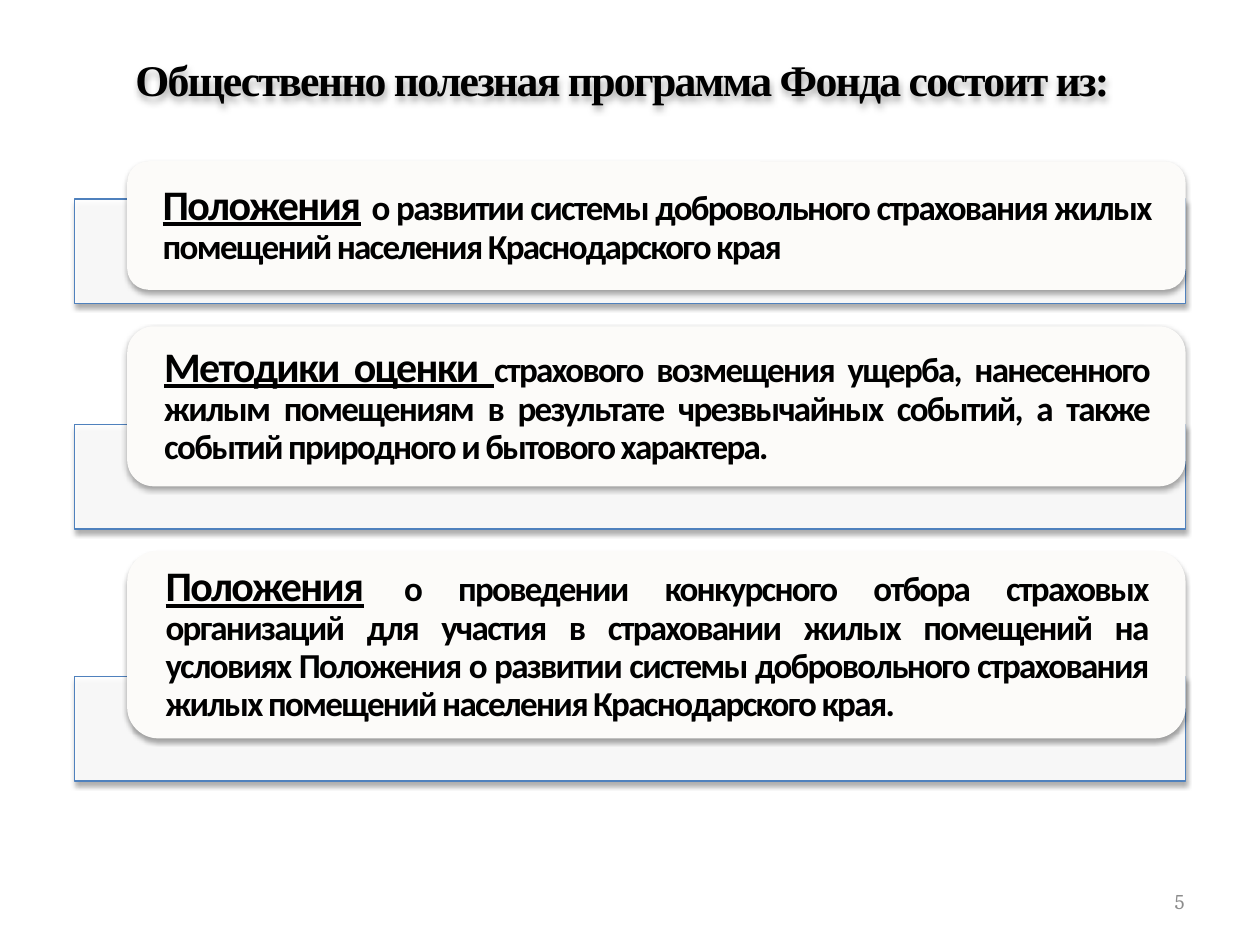
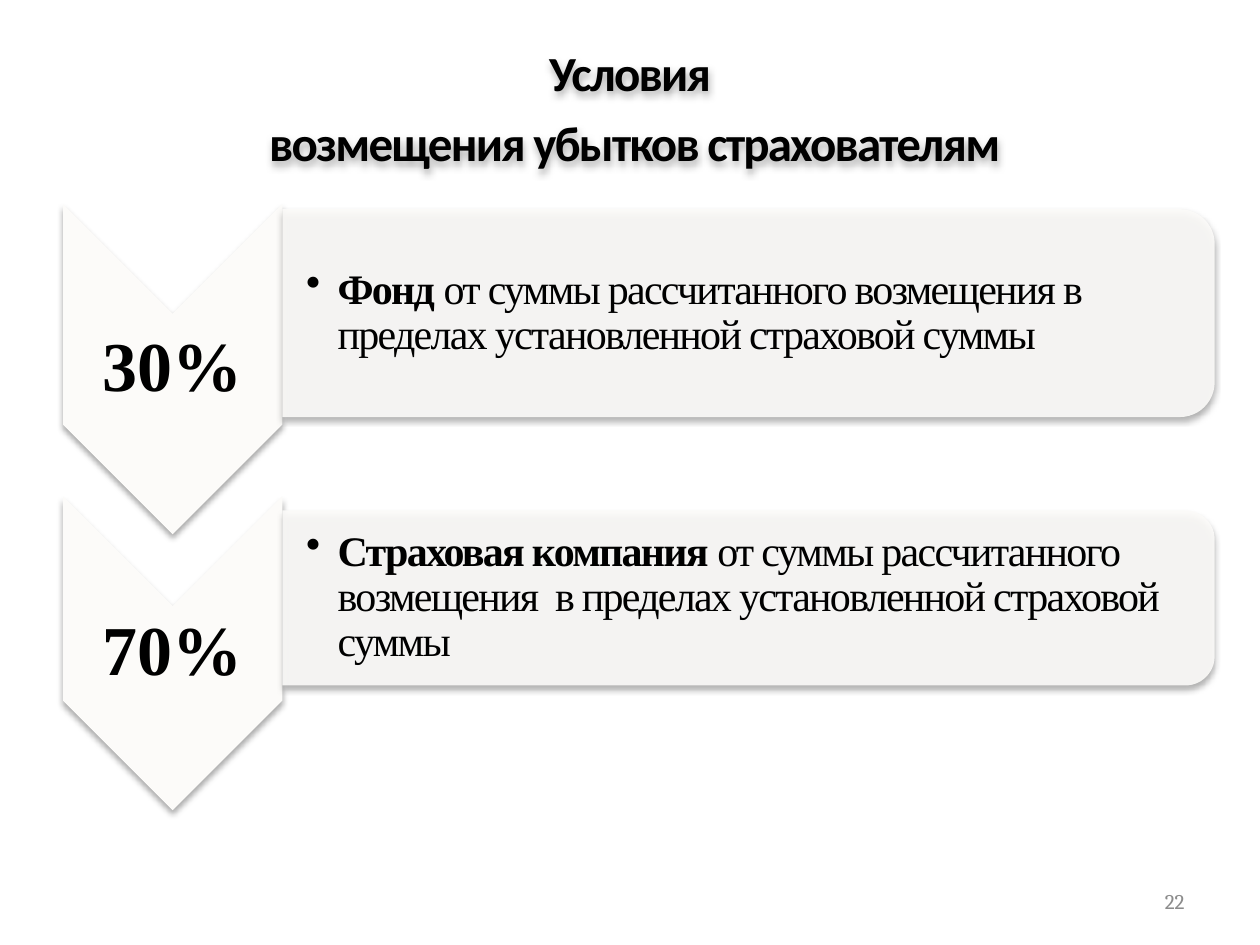
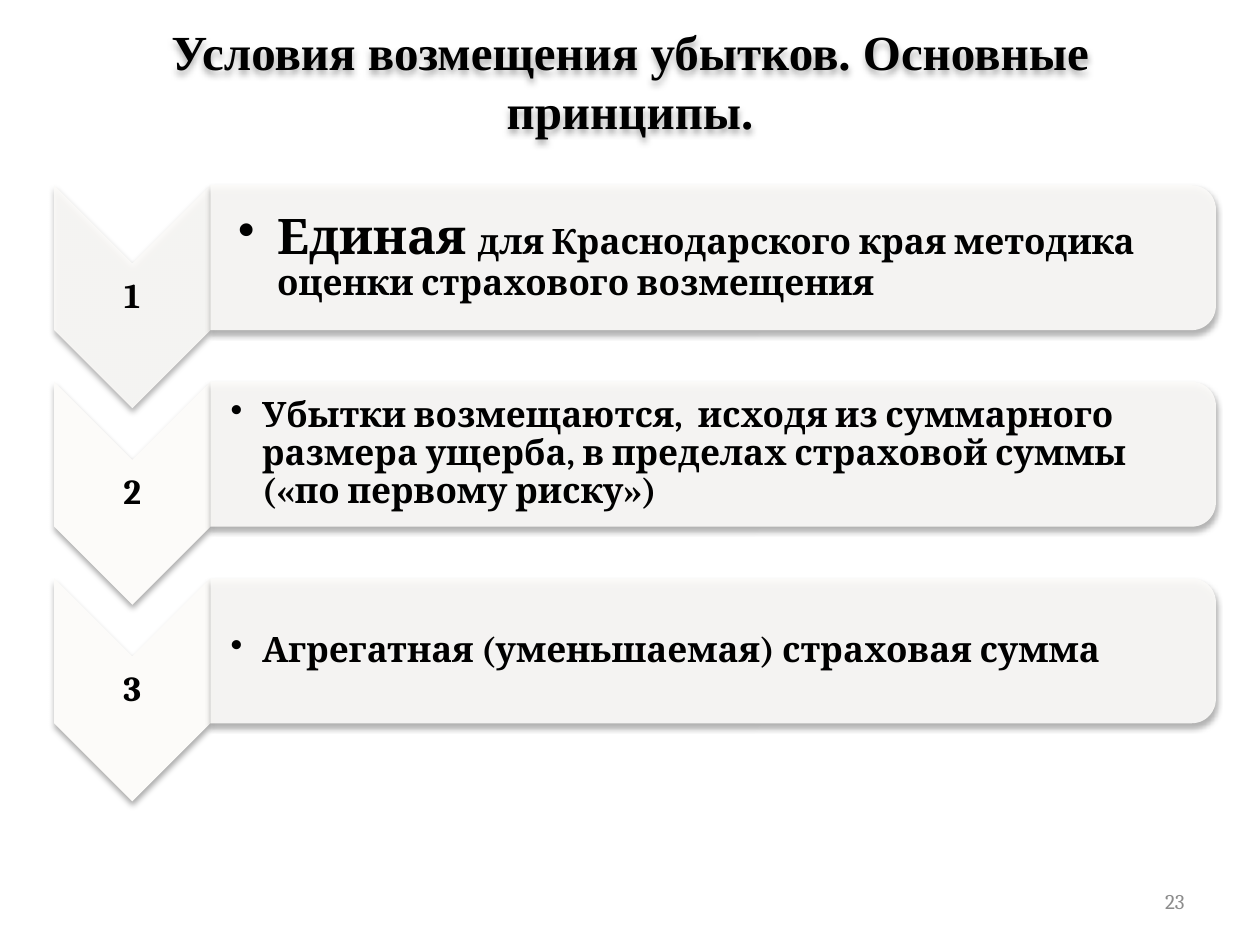
from lxml import etree
from pptx import Presentation, util as u
from pptx.dml.color import RGBColor
from pptx.enum import shapes, text
from pptx.oxml import parse_xml
from pptx.oxml.ns import nsdecls, qn

COLORS = {"ink": "000000", "white": "FFFFFF", "cream": "FCFBF9",
          "edge": "4F81BD", "number": "8C8C8C", "outline": "3C4422"}
SERIF, SANS, BOOK = "Times New Roman", "Calibri", "Cambria"
CELL = u.Inches(0.1)  # the slide is a grid of 100 columns by 75 rows
# shadow: opacity in percent, blur and distance in points
STRIP_SHADOW, ARROW_SHADOW, TITLE_SHADOW = (35, 3.1, 1.8), (32, 3.5, 2.2), (32, 4, 2.5)
TITLE = {"align": "CENTER", "shadow": TITLE_SHADOW, "outlined": True}
DEFAULT_INSETS = (1, 0.5, 1, 0.5)


def add_block(slide, kind, box, fill=None, opacity=100, line=None, shadow=None, turned=False):
    """Place a shape (a text box if kind is None); box is what shows, even when turned by 90°."""
    left, top, width, height = box
    if turned:
        left, top = left + (width - height) / 2, top + (height - width) / 2
        width, height = height, width
    place = [round(v * CELL) for v in (left, top, width, height)]
    if kind is None:
        block = slide.shapes.add_textbox(*place)
    else:
        block = slide.shapes.add_shape(kind, *place)
        block.shadow.inherit = False
        block.fill.solid()
        block.fill.fore_color.rgb = RGBColor.from_string(COLORS[fill])
        if opacity < 100:
            tint = block.fill._xPr.find(qn("a:solidFill"))[0]
            etree.SubElement(tint, qn("a:alpha"), val=str(opacity * 1000))
        if line:
            block.line.color.rgb = RGBColor.from_string(COLORS[line])
            block.line.width = u.Pt(0.75)
        else:
            block.line.fill.background()
    if turned:
        block.rotation = 90
    if shadow:
        alpha, blur, distance = shadow
        properties = block._element.spPr
        for empty in properties.findall(qn("a:effectLst")):
            properties.remove(empty)
        properties.append(parse_xml(
            f'<a:effectLst {nsdecls("a")}><a:outerShdw blurRad="{u.Pt(blur)}" dist="{u.Pt(distance)}" '
            f'dir="5400000" rotWithShape="0"><a:srgbClr val="{COLORS["ink"]}">'
            f'<a:alpha val="{alpha * 1000}"/></a:srgbClr></a:outerShdw></a:effectLst>'))
    return block


def write(slide, box, paragraphs, font, size, color="ink", bold=True, align="LEFT", anchor="TOP",
          insets=DEFAULT_INSETS, leading=None, before=None, tracking=0, hanging=0,
          outlined=False, shadow=None):
    """Each paragraph is a list of (words, font settings that differ) pairs."""
    frame = add_block(slide, None, box, shadow=shadow).text_frame
    frame.word_wrap = True
    frame.vertical_anchor = text.MSO_ANCHOR[anchor]
    for side, inset in zip(("left", "top", "right", "bottom"), insets):
        setattr(frame, f"margin_{side}", round(inset * CELL))
    for index, runs in enumerate(paragraphs):
        paragraph = frame.add_paragraph() if index else frame.paragraphs[0]
        paragraph.alignment = text.PP_ALIGN[align]
        if hanging:
            paragraph.level = 1
            settings = paragraph._p.get_or_add_pPr()
            settings.set("marL", str(round(hanging * CELL)))
            settings.set("indent", str(-round(hanging * CELL)))
            etree.SubElement(settings, qn("a:buChar"), char="•")
        if leading:
            paragraph.line_spacing = leading
        if before:
            paragraph.space_before = u.Pt(before)
        paragraph.font.name, paragraph.font.size = font, u.Pt(size)
        paragraph.font.bold = bold
        paragraph.font.color.rgb = RGBColor.from_string(COLORS[color])
        for words, differences in runs:
            run = paragraph.add_run()
            run.text = words
            for setting, value in differences.items():
                setattr(run.font, setting, value)
            marks = run._r.get_or_add_rPr()
            if tracking:
                marks.set("spc", str(tracking * 100))
            if outlined:
                marks.insert(0, parse_xml(
                    f'<a:ln {nsdecls("a")} w="{u.Pt(0.25)}"><a:solidFill><a:srgbClr val="{COLORS["outline"]}">'
                    '<a:alpha val="25000"/></a:srgbClr></a:solidFill></a:ln>'))


deck = Presentation()
deck.slide_width, deck.slide_height = 100 * CELL, 75 * CELL
programme, shares, principles = [deck.slides.add_slide(deck.slide_layouts[6]) for _ in range(3)]
for slide, number in ((programme, "5"), (shares, "22"), (principles, "23")):
    write(slide, (71.7, 69.5, 23.3, 4), [[(number, {})]], BOOK, 12, "number",
          bold=False, align="RIGHT", anchor="MIDDLE")

# Parts of the programme: a card over a strip
write(programme, (-0.4, 3.7, 99.6, 8.6), [[("Общественно полезная программа Фонда состоит из:", {})]],
      SERIF, 25, before=6, tracking=-1, **TITLE)
lead = {"size": u.Pt(24), "underline": True}
gap = (" ", {"size": u.Pt(24)})
parts = [
    (15.8, 12.8, 10.2, [("Положения", lead), gap, (
        "о развитии системы добровольного страхования жилых помещений населения Краснодарского края", {})]),
    (33.7, 25.9, 12.7, [("Методики оценки ", lead), (
        "страхового возмещения ущерба, нанесенного жилым помещениям в результате чрезвычайных событий, "
        "а также событий природного и бытового характера. ", {})]),
    (53.7, 43.7, 14.9, [("Положения", lead), gap, (
        "о проведении конкурсного отбора страховых организаций для участия в страховании жилых помещений "
        "на условиях Положения о развитии системы добровольного страхования жилых помещений населения "
        "Краснодарского края.", {})]),
]
for strip_top, card_top, card_height, runs in parts:
    add_block(programme, shapes.MSO_SHAPE.RECTANGLE, (5.9, strip_top, 88.2, 8.3),
              "white", 90, "edge", STRIP_SHADOW)
    add_block(programme, shapes.MSO_SHAPE.ROUNDED_RECTANGLE, (10.1, card_top, 84, card_height),
              "cream", shadow=STRIP_SHADOW)
    pad = card_height * 0.05
    write(programme, (10.1 + pad, card_top + pad, 84 - 2 * pad, card_height - 2 * pad), [runs], SANS, 20,
          align="JUSTIFY", anchor="MIDDLE", insets=(2.3, 0, 2.3, 0), leading=0.9, tracking=-1)

# Titles of the two slides with arrows
write(shares, (0, 2.9, 100, 8.7), [[("Условия", {})], [(" возмещения убытков страхователям", {})]],
      SANS, 28, before=6, tracking=-1, **TITLE)
write(principles, (5, 3.6, 90, 5.5), [[("Условия возмещения убытков. Основные принципы.", {})]],
      SERIF, 28, anchor="MIDDLE", **TITLE)

# Rows of a downward arrow with its label and a bar with its point
plain = {"bold": False}
share_look = {"left": 5, "width": 17.4, "bar": 74, "font": SERIF, "label_size": 40, "size": 24, "tracking": -1}
principle_look = {"left": 4.3, "width": 12.4, "bar": 79.8, "font": BOOK, "label_size": 20, "size": 20, "tracking": 0}
first_top, pitch = 14.7, 15.6
principle_points = [
    ("1", 90, 2.2, 3.1, [("Единая ", {"size": u.Pt(28)}),
                         ("для Краснодарского края методика оценки страхового возмещения", {})]),
    ("2", 100, 1.6, 2.5, [("Убытки возмещаются,  исходя из суммарного размера ущерба, "
                           "в пределах страховой суммы («по первому риску»)", {})]),
    ("3", 100, 1.6, 2.5, [("Агрегатная (уменьшаемая) страховая сумма", {})]),
]
rows = [
    (shares, share_look, 16.2, 26.2, 16.6, 16.5, "30%", 100, 1.9, 2.5, [
        ("Фонд ", {}),
        ("от суммы рассчитанного возмещения в пределах установленной страховой суммы", plain)]),
    (shares, share_look, 39.4, 24.9, 40.5, 13.9, "70%", 100, 1.9, 2.5, [
        ("Страховая компания ", {}),
        ("от суммы рассчитанного возмещения  в пределах установленной страховой суммы", plain)]),
] + [(principles, principle_look, first_top + i * pitch, 17.7, first_top + i * pitch, 11.5, *point)
     for i, point in enumerate(principle_points)]

for (slide, look, arrow_top, arrow_height, bar_top, bar_height,
     label, opacity, inset, hanging, runs) in rows:
    left, width = look["left"], look["width"]
    add_block(slide, shapes.MSO_SHAPE.CHEVRON, (left, arrow_top, width, arrow_height),
              "cream", opacity, shadow=ARROW_SHADOW, turned=True)
    write(slide, (left, arrow_top + width / 2, width, arrow_height - width), [[(label, {})]],
          look["font"], look["label_size"], align="CENTER", anchor="MIDDLE",
          insets=(0.2,) * 4, leading=0.9)
    bar_left = left + width
    add_block(slide, shapes.MSO_SHAPE.ROUND_2_SAME_RECTANGLE, (bar_left, bar_top, look["bar"], bar_height),
              "cream", 90, shadow=ARROW_SHADOW, turned=True)
    pad = bar_height * 0.05
    write(slide, (bar_left, bar_top + pad, look["bar"] - pad, bar_height - 2 * pad), [runs],
          look["font"], look["size"], anchor="MIDDLE", insets=(inset, 0.2, 0.2, 0.2),
          leading=0.9, tracking=look["tracking"], hanging=hanging)

deck.save("out.pptx")
